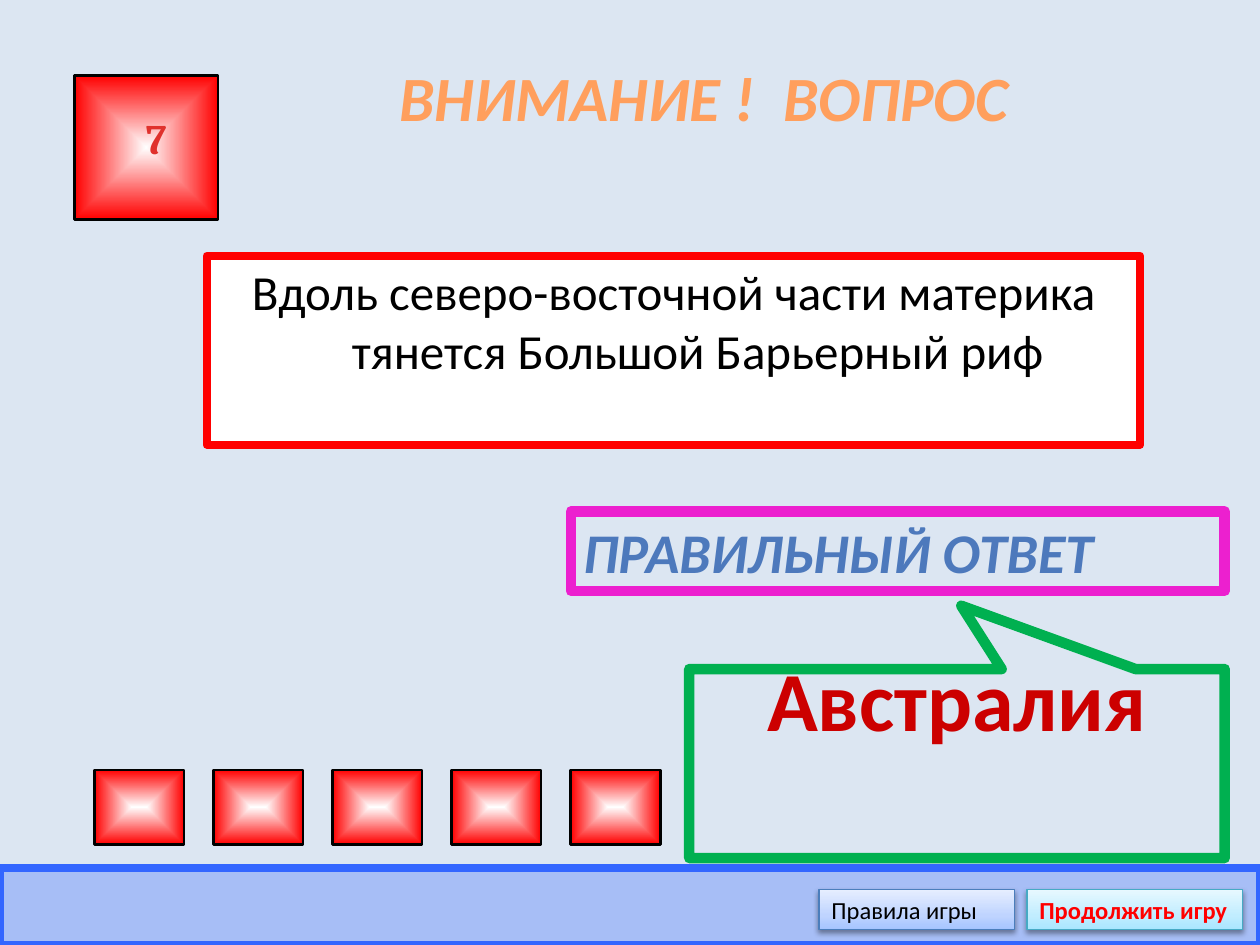
from lxml import etree
from pptx import Presentation
from pptx.dml.color import RGBColor
from pptx.enum import shapes, text
from pptx.oxml.ns import qn
from pptx.util import Inches, Pt

KIND = shapes.MSO_SHAPE
MID = text.MSO_ANCHOR.MIDDLE
TOP = text.MSO_ANCHOR.TOP
LEFT = text.PP_ALIGN.LEFT
MIDDLE = text.PP_ALIGN.CENTER
PALE = "DCE6F2"


def tint(code):
    """Turn a hex string into a colour."""
    return RGBColor.from_string(code)


def node(root, tag, **vals):
    """Add a drawing element with attributes."""
    return etree.SubElement(root, qn("a:" + tag), {k: str(v) for k, v in vals.items()})


def place(item, box):
    """Set position and size in inches."""
    for name, size in zip(("left", "top", "width", "height"), box):
        setattr(item, name, Inches(size))


def shape(slide, kind, box, line, width, fill=None):
    """Add a flat outlined preset shape."""
    item = slide.shapes.add_shape(kind, *map(Inches, box))
    item.shadow.inherit = False
    item.line.color.rgb = tint(line)
    item.line.width = Pt(width)
    if fill:
        item.fill.solid()
        item.fill.fore_color.rgb = tint(fill)
    return item


def blend(item, stops, angle=None):
    """Fill with a linear gradient, or a rectangular one without an angle."""
    item.fill.gradient()
    grad = item.element.spPr.find(qn("a:gradFill"))
    for child in list(grad):
        grad.remove(child)
    row = node(grad, "gsLst")
    for pos, code in stops:
        node(node(row, "gs", pos=pos * 1000), "srgbClr", val=code)
    if angle is None:
        path = node(grad, "path", path="rect")
        node(path, "fillToRect", l=50000, t=50000, r=50000, b=50000)
    else:
        node(grad, "lin", ang=angle * 60000, scaled=0)


def write(item, words, size, code, face="Calibri", align=LEFT, anchor=MID,
          wrap=True, **style):
    """Put one styled paragraph in a shape and return it."""
    frame = item.text_frame
    frame.word_wrap = wrap
    frame.vertical_anchor = anchor
    para = frame.paragraphs[0]
    para.alignment = align
    run = para.add_run()
    run.text = words
    run.font.color.rgb = tint(code)
    for name, val in {"name": face, "size": Pt(size), **style}.items():
        setattr(run.font, name, val)
    return para


def gem(slide, box):
    """Add a red glowing button."""
    item = shape(slide, KIND.ACTION_BUTTON_CUSTOM, box, "000000", 1.5)
    blend(item, [(0, "FFFFFF"), (100, "FF0000")])


def link(slide, box, words, line, stops, code, bold):
    """Add a menu button with a soft shadow."""
    item = shape(slide, KIND.RECTANGLE, box, line, 0.75)
    blend(item, stops, 270)
    glow = node(item.element.spPr.find(qn("a:effectLst")), "outerShdw",
                blurRad=Pt(3.1), dist=Pt(1.6), dir=90 * 60000, rotWithShape=0)
    node(node(glow, "srgbClr", val="000000"), "alpha", val=38000)
    write(item, words, 14, code, wrap=False, bold=bold)


def ask(slide):
    """Add the heading, the number and the question."""
    title = slide.shapes.title
    place(title, (2.4, 0.3, 6.38, 0.93))
    write(title, "ВНИМАНИЕ !  ВОПРОС", 36, "FF9F5D", align=MIDDLE,
          bold=True, italic=True)
    box = shape(slide, KIND.RECTANGLE, (1.64, 2.03, 7.41, 1.5), "FF0000", 4.5, "FFFFFF")
    para = write(box, "Вдоль северо-восточной части материка тянется Большой Барьерный риф",
                 28, "000000", align=MIDDLE, anchor=TOP)
    para.space_before = Pt(5.6)
    props = para._p.get_or_add_pPr()
    props.set("marL", str(Inches(0.38)))
    props.set("indent", str(Inches(-0.38)))
    gem(slide, (0.59, 0.6, 1.14, 1.14))
    num = slide.shapes.add_textbox(*map(Inches, (1.06, 0.84, 0.31, 0.63)))
    write(num, "7", 24, "E0322D", "Cambria", anchor=TOP, wrap=False, bold=True)


def reply(slide):
    """Add the answer label and its callout."""
    label = shape(slide, KIND.RECTANGLE, (4.53, 4.06, 5.19, 0.63), "EC20CF", 6, PALE)
    write(label, "ПРАВИЛЬНЫЙ ОТВЕТ", 32, "4D79BC", wrap=False, bold=True, italic=True)
    call = shape(slide, KIND.RECTANGULAR_CALLOUT, (5.47, 5.31, 4.25, 1.5),
                 "00B050", 6, PALE)
    call.rotation = 180
    call.adjustments[0] = -0.008
    call.adjustments[1] = 0.835
    para = write(call, "Австралия", 48, "CC0000", align=MIDDLE, anchor=TOP, bold=True)
    para.line_spacing = 0.7
    call.text_frame._txBody.bodyPr.set("rot", str(180 * 60000))


def menu(slide):
    """Add the bottom bar with its buttons."""
    bar = shape(slide, KIND.RECTANGLE, (0, 6.89, 10, 0.61), "3366FF", 4.5, "3366FF")
    hue = bar.element.spPr.find(qn("a:solidFill"))[0]
    node(hue, "alpha", val=31000)
    link(slide, (6.5, 7.06, 1.55, 0.32), "Правила игры", "4B7EBC",
         [(0, "A4C4FF"), (35, "BFD4FF"), (100, "E6EEFF")], "000000", False)
    link(slide, (8.15, 7.06, 1.71, 0.32), "Продолжить игру", "46AAC5",
         [(0, "A7E6FF"), (35, "C1EDFF"), (100, "E7F8FF")], "FF0000", True)


def main():
    """Build and save the quiz slide."""
    deck = Presentation()
    deck.slide_width, deck.slide_height = Inches(10), Inches(7.5)
    slide = deck.slides.add_slide(deck.slide_layouts[5])
    slide.background.fill.solid()
    slide.background.fill.fore_color.rgb = tint(PALE)
    ask(slide)
    for i in range(5):
        gem(slide, (0.75 + i * 0.945, 6.11, 0.71, 0.59))
    reply(slide)
    menu(slide)
    deck.save("out.pptx")


if __name__ == "__main__":
    main()
